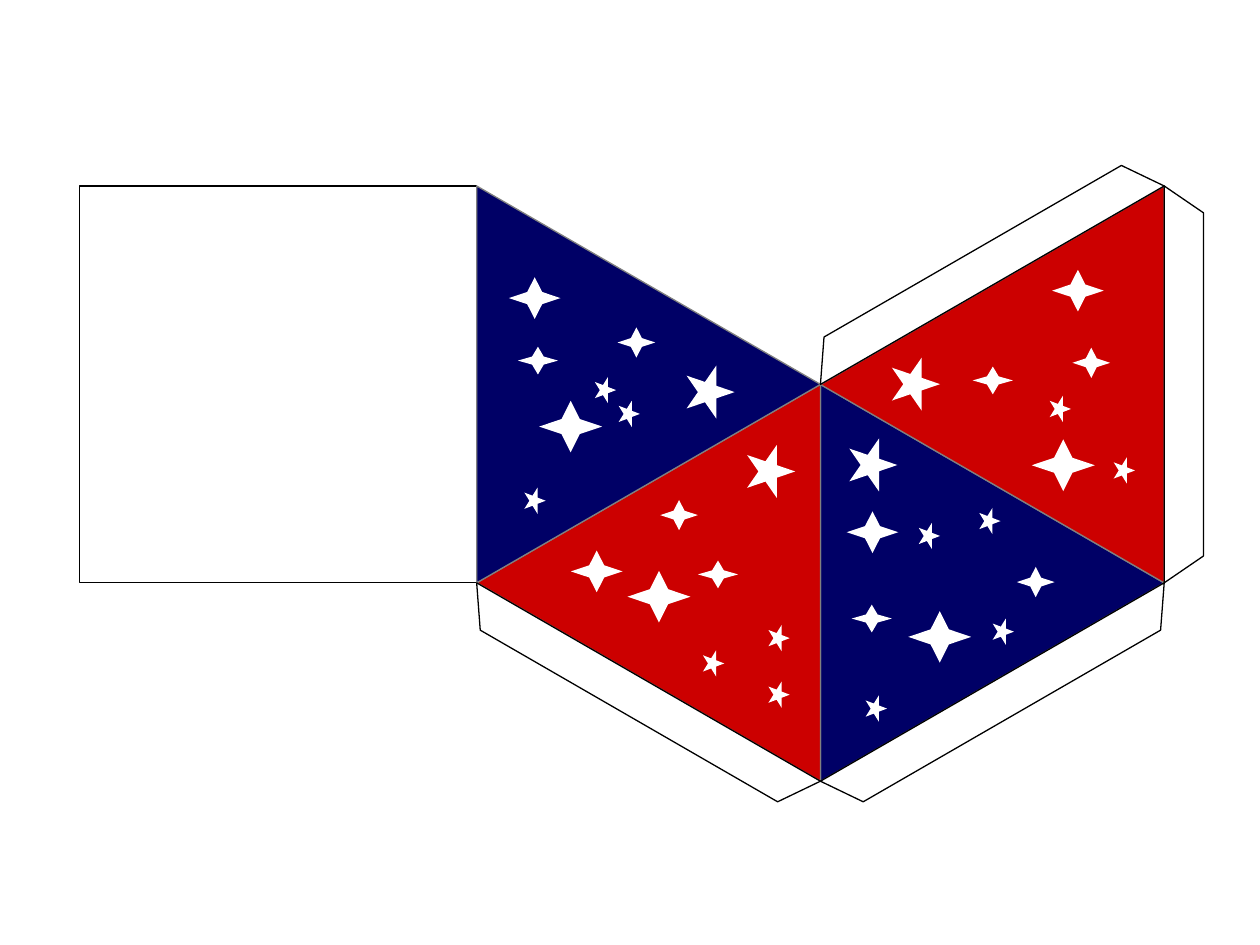
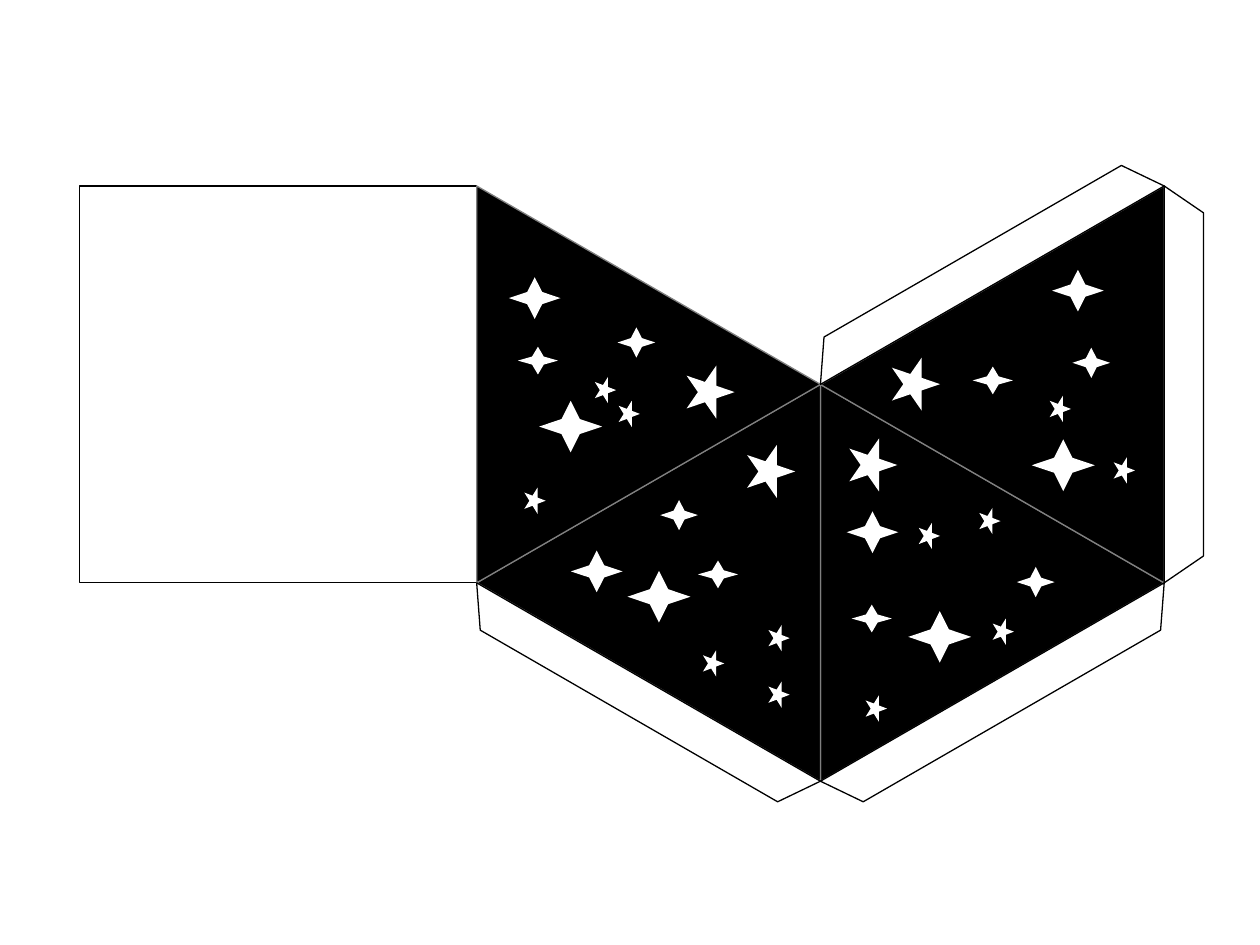
from itertools import pairwise
from math import cos, radians, sin

from pptx import Presentation
from pptx.dml.color import RGBColor
from pptx.enum.shapes import MSO_SHAPE
from pptx.util import Cm, Pt

RECTANGLE = MSO_SHAPE.RECTANGLE
TRIANGLE = MSO_SHAPE.ISOSCELES_TRIANGLE
SPARK = MSO_SHAPE.STAR_4_POINT
STAR = MSO_SHAPE.STAR_5_POINT

WHITE = RGBColor(0xFF, 0xFF, 0xFF)
BLACK = RGBColor(0x00, 0x00, 0x00)
GRAY = RGBColor(0x80, 0x80, 0x80)
NAVY = RGBColor(0x00, 0x00, 0x66)
RED = RGBColor(0xCC, 0x00, 0x00)

# Panel colours of each slide: lower right, lower left, left, upper right
COLOUR_SCHEMES = [(NAVY, RED, NAVY, RED), (BLACK,) * 4]

# Pyramid net, in centimetres: equilateral panels around a hub
SIDE = 8
HEIGHT = 6.93
HUB_X, HUB_Y = 16.54, 7.75
LEFT_X, RIGHT_X = HUB_X - HEIGHT, HUB_X + HEIGHT
TOP_Y, LOW_Y = HUB_Y - SIDE / 2, HUB_Y + SIDE / 2

HUB = (HUB_X, HUB_Y)
UPPER_RIGHT = (RIGHT_X, TOP_Y)
LOWER_RIGHT = (RIGHT_X, LOW_Y)
BOTTOM = (HUB_X, HUB_Y + SIDE)
LOWER_LEFT = (LEFT_X, LOW_Y)

# Tip and rotation of each panel
PANELS = [(HUB, 330), (BOTTOM, 150), (HUB, 90), (UPPER_RIGHT, 30)]

# Glue flaps follow the free edges clockwise
FLAP_EDGES = list(pairwise([HUB, UPPER_RIGHT, LOWER_RIGHT, BOTTOM, LOWER_LEFT]))
FLAP_DEPTH = 0.79
FLAP_INSET = 0.54

# Every panel has the same five large stars, then small ones
STAR_KINDS = [
    (SPARK, 1.04, 0.84),
    (SPARK, 1.27, 1.04),
    (SPARK, 0.76, 0.61),
    (SPARK, 0.81, 0.56),
    (STAR, 1.07, 0.97),
] + [(STAR, 0.53, 0.43)] * 4

STAR_POSITIONS = {
    "left": [(10.26, 5.59), (10.87, 8.08), (12.45, 6.6), (10.44, 6.99), (13.79, 7.42),
             (11.94, 7.65), (12.42, 8.13), (10.52, 9.88)],
    "lower left": [(11.51, 11.1), (12.65, 11.51), (13.31, 10.08), (14.07, 11.3), (15.01, 9.02),
                   (15.44, 13.79), (15.44, 12.65), (14.12, 13.16)],
    "upper right": [(21.21, 5.44), (20.8, 8.86), (21.62, 7.01), (19.61, 7.39), (17.93, 7.26),
                    (21.11, 8.03), (22.4, 9.27)],
    "lower right": [(17.07, 10.31), (18.31, 12.32), (20.5, 11.43), (17.17, 12.19), (17.07, 8.89),
                    (19.69, 10.29), (18.47, 10.59), (19.96, 12.52), (17.4, 14.07)],
}


def paint(shape, fill, line=None):
    shape.shadow.inherit = False
    shape.fill.solid()
    shape.fill.fore_color.rgb = fill
    if line is None:
        shape.line.fill.background()
    else:
        shape.line.color.rgb = line
        shape.line.width = Pt(0.75)


def add_preset(slide, kind, left, top, width, height, fill, line=None, rotation=0):
    shape = slide.shapes.add_shape(kind, Cm(left), Cm(top), Cm(width), Cm(height))
    shape.rotation = rotation
    paint(shape, fill, line)
    return shape


def add_panel(slide, tip, rotation, colour):
    # The box centre lies half a height behind the tip
    angle = radians(rotation)
    center_x = tip[0] - HEIGHT / 2 * sin(angle)
    center_y = tip[1] + HEIGHT / 2 * cos(angle)
    add_preset(slide, TRIANGLE, center_x - SIDE / 2, center_y - HEIGHT / 2,
               SIDE, HEIGHT, colour, GRAY, rotation)


def add_flap(slide, start, end):
    along_x, along_y = (end[0] - start[0]) / SIDE, (end[1] - start[1]) / SIDE

    def outer_corner(distance):
        return (start[0] + along_x * distance + along_y * FLAP_DEPTH,
                start[1] + along_y * distance - along_x * FLAP_DEPTH)

    corners = [start, outer_corner(FLAP_INSET), outer_corner(SIDE - FLAP_INSET), end]
    points = [(Cm(x), Cm(y)) for x, y in corners]
    builder = slide.shapes.build_freeform(*points[0])
    builder.add_line_segments(points[1:], close=True)
    paint(builder.convert_to_shape(), WHITE, BLACK)


def add_stars(slide, positions):
    for (kind, width, height), (left, top) in zip(STAR_KINDS, positions):
        rotation = 90 if kind == STAR else 0
        star = add_preset(slide, kind, left, top, width, height, WHITE, rotation=rotation)
        if kind == SPARK:
            star.adjustments[0] = 0.206


def add_net(presentation, colours):
    slide = presentation.slides.add_slide(presentation.slide_layouts[6])
    # Square base
    add_preset(slide, RECTANGLE, LEFT_X - SIDE, TOP_Y, SIDE, SIDE, WHITE, BLACK)
    # Panels, flaps and stars
    for (tip, rotation), colour in zip(PANELS, colours):
        add_panel(slide, tip, rotation, colour)
    for start, end in FLAP_EDGES:
        add_flap(slide, start, end)
    for positions in STAR_POSITIONS.values():
        add_stars(slide, positions)


def main():
    presentation = Presentation()
    presentation.slide_width = Cm(25.4)
    presentation.slide_height = Cm(19.05)
    for colours in COLOUR_SCHEMES:
        add_net(presentation, colours)
    presentation.save("out.pptx")


if __name__ == "__main__":
    main()
